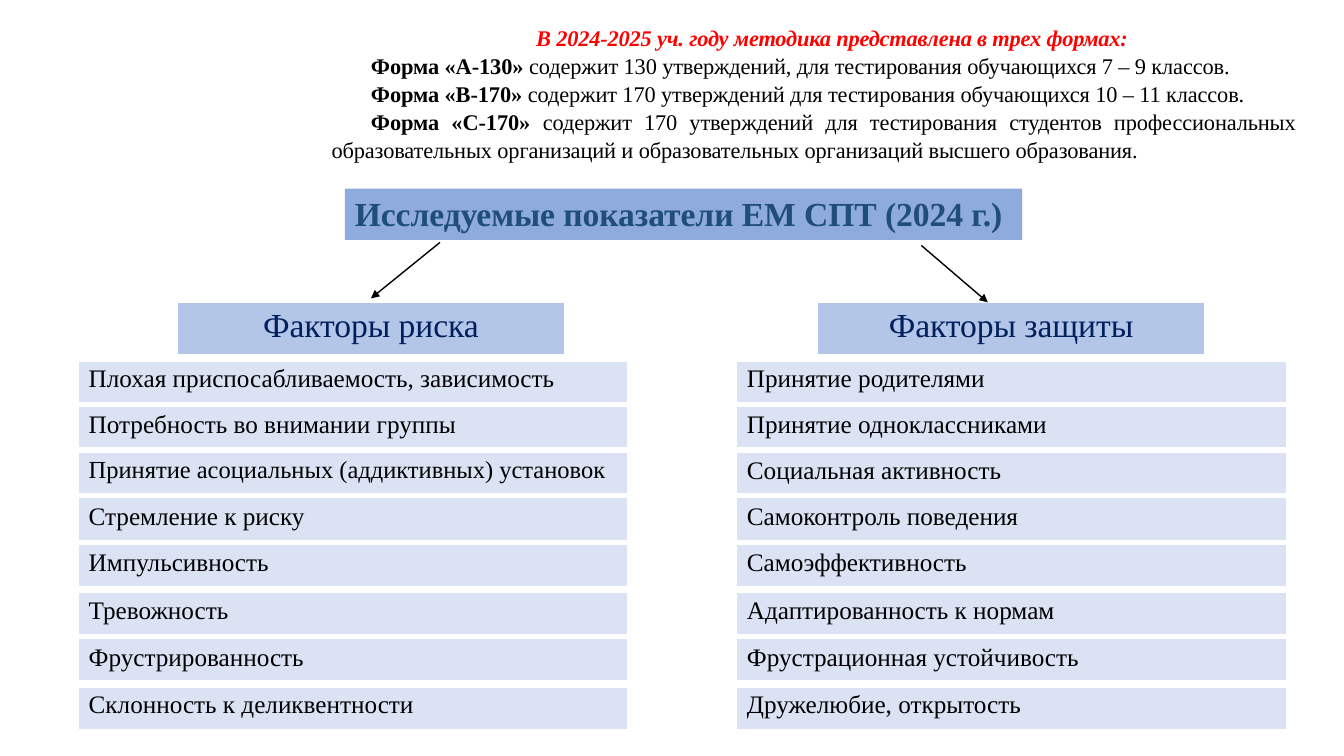
"""Build the slide on the three test forms and the risk and guard factors."""
from lxml import etree
from pptx import Presentation
from pptx.dml.color import RGBColor
from pptx.enum.shapes import MSO_CONNECTOR as Link
from pptx.enum.text import MSO_ANCHOR as Anchor, MSO_AUTO_SIZE as Fit, PP_ALIGN as Align
from pptx.oxml.ns import qn
from pptx.util import Inches, Pt

BLACK = RGBColor(0x00, 0x00, 0x00)
RED = RGBColor(0xFF, 0x00, 0x00)
STEEL = RGBColor(0x1F, 0x4E, 0x79)
NAVY = RGBColor(0x00, 0x1F, 0x5F)
BLUE = RGBColor(0x8F, 0xAA, 0xDC)
SKY = RGBColor(0xB4, 0xC6, 0xE7)
PALE = RGBColor(0xDA, 0xE2, 0xF3)
UNIT = Inches(0.1)


def grid(*cells):
    """Turn grid columns and rows into lengths."""
    return [int(cell * UNIT) for cell in cells]


def write(para, text, size, color, track=0, **look):
    """Add one run with its format."""
    run = para.add_run()
    run.text = text
    form = {"name": "Times New Roman", "size": Pt(size), **look}
    for key, value in form.items():
        setattr(run.font, key, value)
    run.font.color.rgb = color
    if track:
        run.font._element.set("spc", str(track))


deck = Presentation()
deck.slide_width, deck.slide_height = grid(133.33, 75)
slide = deck.slides.add_slide(deck.slide_layouts[5])
shapes = slide.shapes

title = shapes.title
title.left, title.top, title.width, title.height = grid(34.2, 18.7, 67.2, 5.1)
intro = shapes.add_textbox(*grid(32.8, 2.2, 95.8, 13.6))
for box, left, top in ((title, 1, 0.4), (intro, 0.1, 0.1)):
    pads = grid(left, top, 0, 0)
    sides = ("margin_left", "margin_top", "margin_right", "margin_bottom")
    form = {"word_wrap": True, "auto_size": Fit.NONE,
            "vertical_anchor": Anchor.TOP, **dict(zip(sides, pads))}
    for key, value in form.items():
        setattr(box.text_frame, key, value)

title.fill.solid()
title.fill.fore_color.rgb = BLUE
head = title.text_frame.paragraphs[0]
head.alignment = Align.LEFT
write(head, "Исследуемые показатели ЕМ СПТ (2024 г.)", 24, STEEL, -7, bold=True)

forms = (
    ("Форма «А-130» ", "содержит 130 утверждений, для тестирования обучающихся 7 – 9 классов."),
    ("Форма «В-170» ", "содержит 170 утверждений для тестирования обучающихся 10 – 11 классов."),
    ("Форма «С-170» ", "содержит 170 утверждений для тестирования студентов профессиональных "
     "образовательных организаций и образовательных организаций высшего образования."),
)
lead = intro.text_frame.paragraphs[0]
lead.line_spacing = 1.04
lead._p.get_or_add_pPr().set("marL", str(grid(20.3)[0]))
write(lead, "В 2024-2025 уч. году методика представлена в трех формах:",
      16, RED, -10, bold=True, italic=True)
for name, note in forms:
    para = intro.text_frame.add_paragraph()
    para.alignment = Align.JUSTIFY
    para.line_spacing = 1.04
    para._p.get_or_add_pPr().set("indent", str(grid(3.9)[0]))
    write(para, name, 16, BLACK, -5, bold=True)
    write(para, note, 16, BLACK, -8, bold=False)

risks = ("Факторы риска", "Плохая приспосабливаемость, зависимость", "Потребность во внимании группы",
         "Принятие асоциальных (аддиктивных) установок", "Стремление к риску", "Импульсивность",
         "Тревожность", "Фрустрированность", "Склонность к деликвентности")
guards = ("Факторы защиты", "Принятие родителями", "Принятие одноклассниками",
          "Социальная активность", "Самоконтроль поведения", "Самоэффективность",
          "Адаптированность к нормам", "Фрустрационная устойчивость", "Дружелюбие, открытость")
rows = (5.4, 4.6, 4.55, 4.55, 4.6, 4.7, 4.7, 4.7, 4.4)
gaps = (0, 6, 4.25, 4.25, 4.25, 4.25, 6, 4.25, 6, 0)
lists = ((risks, 7.8, (9.8, 38.4, 6.3)), (guards, 73.1, (8, 38.4, 8.1)))
for names, left, cols in lists:
    table = shapes.add_table(9, 3, *grid(left, 30.1, sum(cols), sum(rows))).table
    table.first_row = table.horz_banding = False
    for col, width in zip(table.columns, grid(*cols)):
        col.width = width
    for index, (name, height) in enumerate(zip(names, grid(*rows))):
        table.rows[index].height = height
        for cell in table.rows[index].cells:
            cell.margin_left = cell.margin_right = cell.margin_bottom = 0
            cell.margin_top = grid(0.7 if index else 0.4)[0]
            cell.fill.background()
            props = cell._tc.get_or_add_tcPr()
            for spot, (side, gap) in enumerate(zip(("lnT", "lnB"), gaps[index:index + 2])):
                line = etree.Element(qn("a:" + side), w=str(Pt(gap)))
                if gap:
                    fill = etree.SubElement(line, qn("a:solidFill"))
                    etree.SubElement(fill, qn("a:srgbClr"), val="FFFFFF")
                else:
                    etree.SubElement(line, qn("a:noFill"))
                props.insert(spot, line)
        cell = table.cell(index, 0 if index else 1)
        if index:
            cell.merge(table.cell(index, 2))
            cell.margin_left = UNIT
        cell.fill.solid()
        cell.fill.fore_color.rgb = PALE if index else SKY
        para = cell.text_frame.paragraphs[0]
        para.alignment = Align.LEFT if index else Align.CENTER
        size = 17.5 if "асоциальных" in name else 18 if index else 24
        write(para, name, size, BLACK if index else NAVY, 0 if index else -7)

for ends in ((43.65, 24.05, 36.8, 29.6), (91.4, 24.35, 98, 30)):
    arrow = shapes.add_connector(Link.STRAIGHT, *grid(*ends))
    arrow.line.width = Pt(1)
    arrow.line.color.rgb = BLACK
    etree.SubElement(arrow.line._get_or_add_ln(), qn("a:tailEnd"), type="triangle")
    etree.SubElement(arrow._element.spPr, qn("a:effectLst"))

deck.save("out.pptx")
